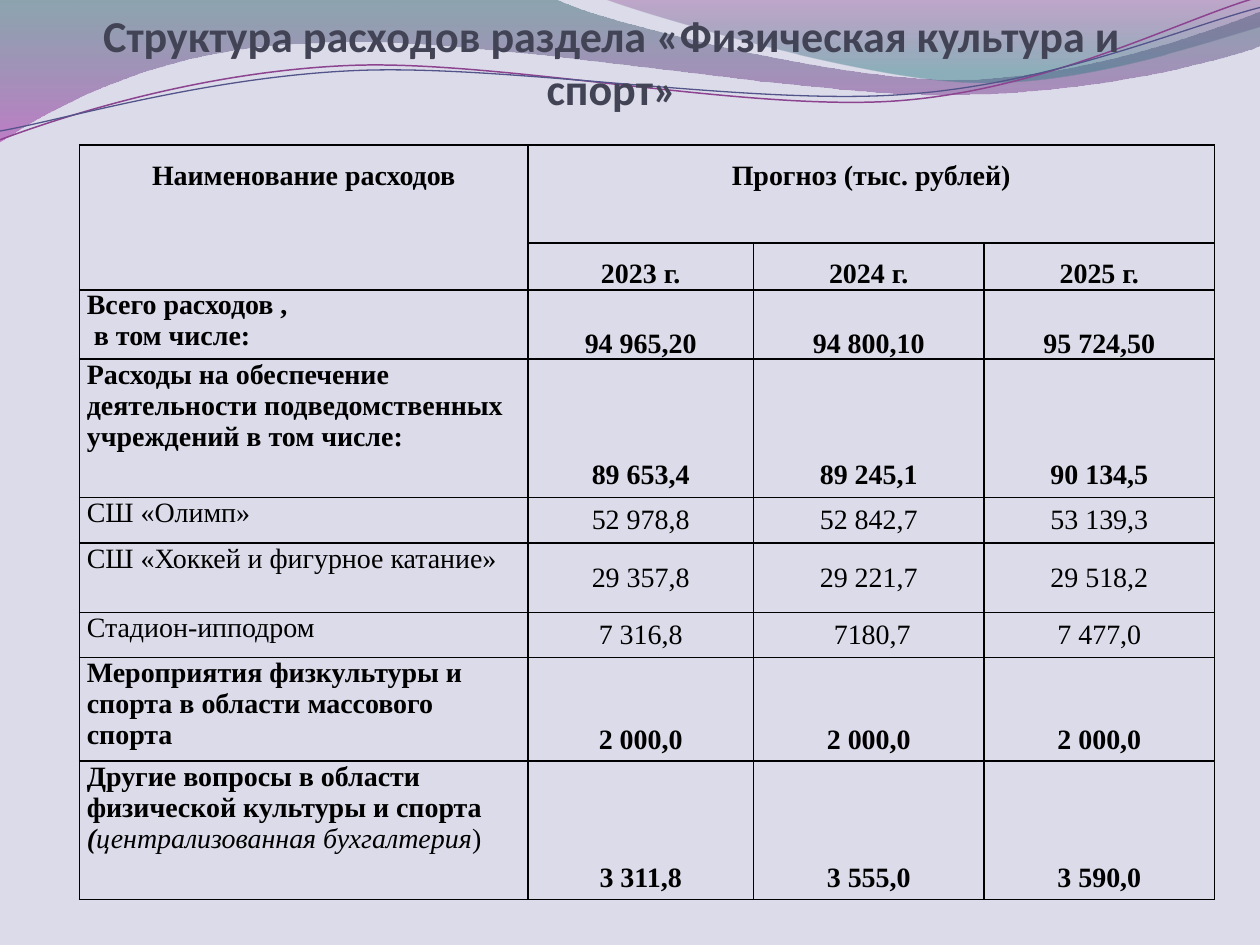
from dataclasses import dataclass
from math import cos, radians, sin
from lxml.etree import SubElement
from pptx import Presentation
from pptx.dml.color import RGBColor
from pptx.enum.text import MSO_ANCHOR, MSO_AUTO_SIZE, PP_ALIGN
from pptx.oxml.ns import qn
from pptx.util import Inches, Pt


@dataclass(frozen=True)
class Theme:
    back: str = "DBDBE9"
    title: str = "424456"
    ink: str = "000000"
    head: str = "Calibri"
    body: str = "Times New Roman"
    big: float = 25.2
    text: float = 16
    rule: float = 1
    tilt: float = 357.3


T = Theme()
TOP, MID, LOW = MSO_ANCHOR.TOP, MSO_ANCHOR.MIDDLE, MSO_ANCHOR.BOTTOM

TITLE = "Структура расходов раздела «Физическая культура и спорт»"
NAME, PLAN = "Наименование расходов", "Прогноз (тыс. рублей)"
YEARS = ["2023 г.", "2024 г.", "2025 г."]

ROWS = [
    ([[("Всего расходов ,", "b")], [(" в том числе:", "b")]],
     ["94 965,20", "94 800,10", "95 724,50"], "b", LOW, 0),
    ([[("Расходы на обеспечение деятельности подведомственных учреждений в том числе:", "b")]],
     ["89 653,4", "89 245,1", "90 134,5"], "b", LOW, 0.06),
    ([[("СШ «Олимп»", "")]],
     ["52 978,8", "52 842,7", "53 139,3"], "", MID, 0),
    ([[("СШ «Хоккей и фигурное катание»", "")]],
     ["29 357,8", "29 221,7", "29 518,2"], "", MID, 0),
    ([[("Стадион-ипподром", "")]],
     ["7 316,8", " 7180,7", "7 477,0"], "", MID, 0),
    ([[("Мероприятия физкультуры и спорта в области массового спорта", "b")]],
     ["2 000,0", "2 000,0", "2 000,0"], "b", LOW, 0.04),
    ([[("Другие вопросы в области физической культуры и спорта ", "b"), ("(", "bi"),
       ("централизованная бухгалтерия", "i"), (")", "")]],
     ["3 311,8", "3 555,0", "3 590,0"], "b", LOW, 0.05),
]
COLS = [3.56, 1.79, 1.83, 1.83]
HIGH = [0.78, 0.37, 0.55, 1.1, 0.36, 0.55, 0.36, 0.82, 1.1]

BANDS = [
    ([(0, 0), (4.4, -0.01), (4.76, 0.17, 6.64, 0.63, 7.58, 0.63),
      (8.53, 0.63, 9.58, 0.26, 10, 0.09), (10.01, 0.36),
      (9.83, 0.44, 8.7, 0.76, 7.46, 0.75), (6.22, 0.75, 3.82, 0.28, 2.57, 0.34),
      (1.29, 0.36, 0.46, 0.83, -0.01, 1.13), (0, 0)],
     [(0, "2D6368", 45), (1, "A530A9", 55)]),
    ([(4.79, -0.01), (5.09, 0.11, 6.82, 0.62, 7.69, 0.65),
      (8.56, 0.69, 9.61, 0.32, 10, 0.21), (10, 0), (4.79, -0.01)],
     [(0, "7F2F82", 30), (0.8, "2F7B82", 45)]),
]
LINES = [
    ([(0, 1.11), (0.48, 0.93, 1.58, 0.57, 2.77, 0.52),
      (3.95, 0.47, 5.93, 0.89, 7.13, 0.8), (8.33, 0.71, 9.38, 0.15, 9.98, -0.02)],
     "8D4490", 0.85),
    ([(0, 1.04), (0.47, 0.96, 1.64, 0.61, 2.83, 0.56),
      (4.03, 0.51, 5.97, 0.84, 7.17, 0.75), (8.36, 0.67, 9.41, 0.21, 10, 0.06)],
     "53548A", 0.75),
]


def rgb(hue):
    return RGBColor.from_string(hue)


def turn(x, y, angle):
    c, s = cos(radians(angle)), sin(radians(angle))
    return x * c - y * s, x * s + y * c


def wave(slide, steps, close, tilt=0):
    steps = [[turn(*step[k:k + 2], -tilt) for k in range(0, len(step), 2)] for step in steps]
    dots = [(Inches(x), Inches(y)) for step in steps for x, y in step]
    pen = slide.shapes.build_freeform(*dots[0])
    pen.add_line_segments(dots[1:], close=close)
    shape = pen.convert_to_shape()
    legs = iter(list(shape.element.iter(qn("a:lnTo"))))
    for step in steps[1:]:
        first, *rest = [next(legs) for _ in step]
        if rest:
            first.tag = qn("a:cubicBezTo")
            for leg in rest:
                first.append(leg[0])
                leg.getparent().remove(leg)
    wide, tall = shape.width / 2, shape.height / 2
    x, y = turn(shape.left + wide, shape.top + tall, tilt)
    shape.left, shape.top = round(x - wide), round(y - tall)
    shape.rotation = tilt
    shape.shadow.inherit = False
    return shape


def band(slide, steps, stops):
    shape = wave(slide, steps, True)
    shape.line.fill.background()
    shape.fill.gradient()
    shape.fill.gradient_angle = 270
    for stop, (place, hue, alpha) in zip(shape.fill.gradient_stops, stops):
        stop.position = place
        stop.color.rgb = rgb(hue)
    tints = shape.element.spPr.iter(qn("a:srgbClr"))
    for tint, (_, _, alpha) in zip(tints, stops):
        SubElement(tint, qn("a:alpha"), val=str(alpha * 1000))


def line(slide, steps, hue, width):
    shape = wave(slide, steps, False, T.tilt)
    shape.fill.background()
    shape.line.color.rgb = rgb(hue)
    shape.line.width = Pt(width)


def add_run(para, text, style, face, size, hue):
    run = para.add_run()
    run.text = text
    font = run.font
    font.name, font.size = face, Pt(size)
    font.bold, font.italic = "b" in style, "i" in style
    font.color.rgb = rgb(hue)


def write(cell, paras, align, anchor=TOP, side=0.06, drop=0, lead=None):
    cell.vertical_anchor = anchor
    cell.margin_left = cell.margin_right = Inches(side)
    cell.margin_top, cell.margin_bottom = 0, Inches(drop)
    frame = cell.text_frame
    for k, runs in enumerate(paras):
        para = frame.add_paragraph() if k else frame.paragraphs[0]
        para.alignment, para.line_spacing = align, lead
        for text, style in runs:
            add_run(para, text, style, T.body, T.text, T.ink)


def frame_cell(cell):
    props = cell._tc.get_or_add_tcPr()
    for side in ("lnL", "lnR", "lnT", "lnB"):
        edge = SubElement(props, qn("a:" + side), w=str(Pt(T.rule)))
        fill = SubElement(edge, qn("a:solidFill"))
        SubElement(fill, qn("a:srgbClr"), val=T.ink)
    cell.fill.background()


def add_grid(slide):
    box = slide.shapes.add_table(len(HIGH), len(COLS), Inches(0.63), Inches(1.15),
                                 Inches(sum(COLS)), Inches(sum(HIGH)))
    grid = box.table
    grid.first_row = grid.horz_banding = False
    for col, width in zip(grid.columns, COLS):
        col.width = Inches(width)
    for row, height in zip(grid.rows, HIGH):
        row.height = Inches(height)
    for cell in grid.iter_cells():
        frame_cell(cell)
    grid.cell(0, 0).merge(grid.cell(1, 0))
    grid.cell(0, 1).merge(grid.cell(0, 3))
    heads = [(0, 0, NAME), (0, 1, PLAN)] + [(1, c, y) for c, y in enumerate(YEARS, 1)]
    for r, c, text in heads:
        write(grid.cell(r, c), [[(text, "b")]], PP_ALIGN.CENTER, side=0.07, lead=1.5)
    for r, (name, nums, style, anchor, drop) in enumerate(ROWS, 2):
        write(grid.cell(r, 0), name, PP_ALIGN.LEFT)
        for c, num in enumerate(nums, 1):
            write(grid.cell(r, c), [[(num, style)]], PP_ALIGN.CENTER, anchor, drop=drop)


def add_title(slide):
    title = slide.shapes.title
    title.element.getparent().append(title.element)
    title.left, title.top = Inches(0.81), Inches(0.36)
    title.width, title.height = Inches(8.09), Inches(0.55)
    frame = title.text_frame
    frame.word_wrap, frame.auto_size = True, MSO_AUTO_SIZE.NONE
    frame.vertical_anchor = LOW
    frame.margin_left = frame.margin_right = frame.margin_bottom = 0
    frame.margin_top = Inches(0.05)
    para = frame.paragraphs[0]
    para.alignment = PP_ALIGN.CENTER
    add_run(para, TITLE, "b", T.head, T.big, T.title)


def main():
    deck = Presentation()
    deck.slide_width, deck.slide_height = Inches(10), Inches(7.5)
    slide = deck.slides.add_slide(deck.slide_layouts[5])
    slide.background.fill.solid()
    slide.background.fill.fore_color.rgb = rgb(T.back)
    for item in BANDS:
        band(slide, *item)
    for item in LINES:
        line(slide, *item)
    add_title(slide)
    add_grid(slide)
    deck.save("out.pptx")


if __name__ == "__main__":
    main()
